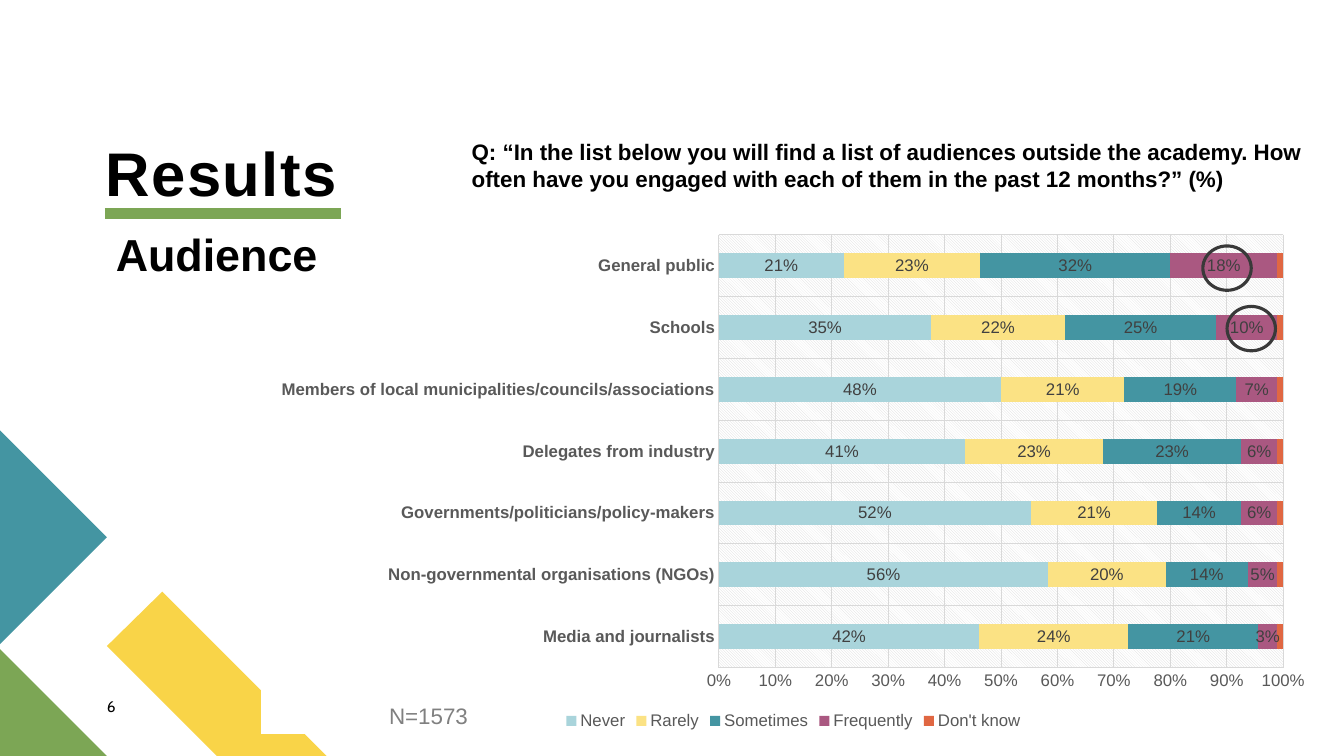
"""Build the slide on how often each audience was engaged."""
from lxml import etree
from pptx import Presentation
from pptx.chart.data import CategoryChartData
from pptx.dml.color import RGBColor
from pptx.enum.chart import XL_CHART_TYPE as ChartType
from pptx.enum.chart import XL_LEGEND_POSITION as LegendPosition
from pptx.enum.chart import XL_TICK_MARK as TickMark
from pptx.enum.shapes import MSO_CONNECTOR as Connector
from pptx.enum.shapes import MSO_SHAPE as Shape
from pptx.enum.text import MSO_ANCHOR as Anchor
from pptx.oxml import parse_xml
from pptx.oxml.ns import nsdecls, qn
from pptx.util import Inches, Pt

COLORS = {
    "yellow": "F9D448", "green": "7CA655", "teal": "4495A2", "pale_blue": "A9D4DB",
    "pale_yellow": "FBE284", "plum": "AA5881", "orange": "E06742", "grid": "D9D9D9",
    "axis": "595959", "label": "404040", "ring": "393939", "note": "808080",
    "black": "000000", "white": "FFFFFF",
}
AUDIENCES = [
    "Media and journalists", "Non-governmental organisations (NGOs)",
    "Governments/politicians/policy-makers", "Delegates from industry",
    "Members of local municipalities/councils/associations", "Schools", "General public",
]
ANSWERS = [
    ("Never", "pale_blue", (0.42, 0.56, 0.52, 0.41, 0.48, 0.35, 0.21)),
    ("Rarely", "pale_yellow", (0.24, 0.2, 0.21, 0.23, 0.21, 0.22, 0.23)),
    ("Sometimes", "teal", (0.21, 0.14, 0.14, 0.23, 0.19, 0.25, 0.32)),
    ("Frequently", "plum", (0.03, 0.05, 0.06, 0.06, 0.07, 0.1, 0.18)),
    ("Don't know", "orange", (0.01,) * len(AUDIENCES)),
]
QUESTION = (
    "Q: “In the list below you will find a list of audiences outside the academy. "
    "How often have you engaged with each of them in the past 12 months?” (%)"
)


def rgb(name):
    """Return the named colour."""
    return RGBColor.from_string(COLORS[name])


def set_font(font, size, color, bold=False, face="Arial"):
    """Set face, size, colour and weight of a font."""
    font.name, font.size, font.bold = face, Pt(size), bold
    font.color.rgb = rgb(color)


def add_polygon(page, points, color):
    """Add a filled polygon without outline."""
    corners = [(Inches(x), Inches(y)) for x, y in points]
    builder = page.shapes.build_freeform(*corners[0])
    builder.add_line_segments(corners[1:])
    shape = builder.convert_to_shape()
    shape.shadow.inherit = False
    shape.fill.solid()
    shape.fill.fore_color.rgb = rgb(color)
    shape.line.fill.background()


def add_rule(page, left, right, y, color, width):
    """Add a horizontal line."""
    rule = page.shapes.add_connector(
        Connector.STRAIGHT, Inches(left), Inches(y), Inches(right), Inches(y))
    rule.line.color.rgb = rgb(color)
    rule.line.width = Pt(width)
    etree.SubElement(rule._element.spPr, qn("a:effectLst"))


def add_text(page, frame, text, size, color="black", bold=False, face="Arial", inset=True):
    """Add a one-paragraph text box and return it."""
    box = page.shapes.add_textbox(*map(Inches, frame))
    body = box.text_frame
    body.word_wrap = True
    if not inset:
        body.margin_left = body.margin_right = body.margin_top = body.margin_bottom = 0
    para = body.paragraphs[0]
    para.text = text
    set_font(para.font, size, color, bold, face)
    return box


def add_title(page, frame, text):
    """Add the bottom-anchored, slightly spaced title."""
    body = add_text(page, frame, text, 44, bold=True, inset=False).text_frame
    body.vertical_anchor = Anchor.BOTTOM
    para = body.paragraphs[0]
    para.line_spacing = 0.9
    para.runs[0]._r.get_or_add_rPr().set("spc", "100")


def add_ring(page, left, top):
    """Add an unfilled ring around a value."""
    ring = page.shapes.add_shape(
        Shape.OVAL, Inches(left), Inches(top), Inches(0.48), Inches(0.44))
    ring.shadow.inherit = False
    ring.fill.background()
    ring.line.color.rgb = rgb("ring")
    ring.line.width = Pt(2.25)


def style_axis(axis, bold):
    """Style the labels, line and gridlines of an axis."""
    axis.major_tick_mark = axis.minor_tick_mark = TickMark.NONE
    axis.has_major_gridlines = True
    set_font(axis.tick_labels.font, 12, "axis", bold)
    for line in (axis.format.line, axis.major_gridlines.format.line):
        line.color.rgb = rgb("grid")
        line.width = Pt(0.75)


def style_areas(chart):
    """Fill the chart white, hatch the plot area and place it."""
    space = chart._chartSpace
    space.find(qn("c:chart")).addnext(parse_xml(
        f'<c:spPr {nsdecls("c", "a")}><a:solidFill><a:srgbClr val="{COLORS["white"]}"/>'
        '</a:solidFill><a:ln><a:noFill/></a:ln></c:spPr>'))
    plot_area = space.chart.plotArea
    plot_area.append(parse_xml(
        f'<c:spPr {nsdecls("c", "a")}><a:pattFill prst="ltDnDiag">'
        f'<a:fgClr><a:srgbClr val="{COLORS["grid"]}"/></a:fgClr>'
        f'<a:bgClr><a:srgbClr val="{COLORS["white"]}"/></a:bgClr>'
        '</a:pattFill><a:ln><a:noFill/></a:ln></c:spPr>'))
    for layout in plot_area.findall(qn("c:layout")):
        plot_area.remove(layout)
    places = "".join(
        f'<c:{key} val="{value}"/>' for key, value in
        (("x", 0.43), ("y", 0.02), ("w", 0.53), ("h", 0.85)))
    plot_area.insert(0, parse_xml(
        f'<c:layout {nsdecls("c")}><c:manualLayout><c:layoutTarget val="inner"/>'
        f'<c:xMode val="edge"/><c:yMode val="edge"/>{places}</c:manualLayout></c:layout>'))


def add_answer_chart(page, frame):
    """Add the stacked bars of answers by audience."""
    data = CategoryChartData(number_format="0%")
    data.categories = AUDIENCES
    for name, _, values in ANSWERS:
        data.add_series(name, values)
    chart = page.shapes.add_chart(
        ChartType.BAR_STACKED_100, *map(Inches, frame), data).chart
    set_font(chart.font, 10, "label")
    chart.has_title = False
    chart.has_legend = True
    chart.legend.position = LegendPosition.BOTTOM
    chart.legend.include_in_layout = False
    set_font(chart.legend.font, 12, "axis")
    style_axis(chart.category_axis, True)
    style_axis(chart.value_axis, False)
    chart.value_axis.tick_labels.number_format = "0%"
    chart.value_axis.tick_labels.number_format_is_linked = False
    plot = chart.plots[0]
    plot.gap_width, plot.overlap, plot.vary_by_categories = 150, 100, False
    for series, (name, color, _) in zip(plot.series, ANSWERS):
        series.format.fill.solid()
        series.format.fill.fore_color.rgb = rgb(color)
        if name != "Don't know":
            labels = series.data_labels
            labels.show_value = True
            labels.number_format = "0%"
            labels.number_format_is_linked = False
            set_font(labels.font, 12, "label")
    style_areas(chart)


def main():
    """Build and save the deck."""
    deck = Presentation()
    deck.slide_width, deck.slide_height = Inches(13.33), Inches(7.5)
    page = deck.slides.add_slide(deck.slide_layouts[6])
    add_polygon(page, [(3.24, 7.5), (2.15, 7.5), (1.06, 6.41), (1.61, 5.87)], "yellow")
    add_polygon(page, [(1.06, 7.5), (0, 7.5), (0, 6.44)], "green")
    add_polygon(page, [(0, 4.27), (1.06, 5.33), (0, 6.39)], "teal")
    add_rule(page, 1.04, 3.38, 2.12, "green", 8)
    add_answer_chart(page, (2.59, 2.23, 10.56, 5.05))
    add_text(page, (1.06, 6.92, 0.57, 0.27), "6", 11, face="Cabin", inset=False)
    add_title(page, (1.05, 1.41, 5.4, 0.67), "Results")
    add_text(page, (1.05, 2.2, 2.7, 0.64), "Audience", 32, bold=True)
    add_text(page, (4.58, 1.32, 8.57, 0.64), QUESTION, 16, bold=True)
    add_ring(page, 11.93, 2.44)
    add_ring(page, 12.17, 3.04)
    add_text(page, (3.76, 6.92, 1.18, 0.37), "N=1573", 16, "note")
    deck.save("out.pptx")


if __name__ == "__main__":
    main()
